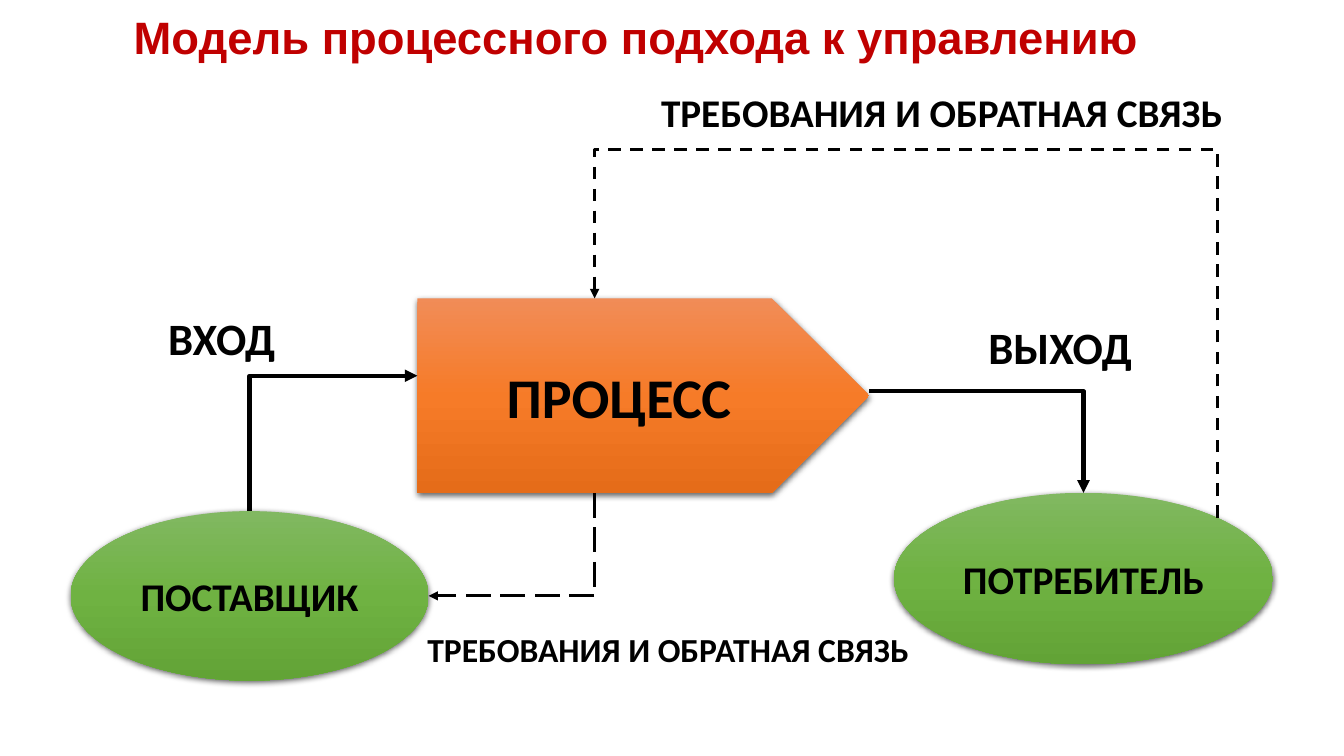
import copy
import math

import pptx
import pptx.dml.color
import pptx.enum.dml
import pptx.enum.shapes
import pptx.enum.text
import pptx.oxml
import pptx.oxml.ns
import pptx.util

Cm, Pt = pptx.util.Cm, pptx.util.Pt
RGB = pptx.dml.color.RGBColor
Form = pptx.enum.shapes.MSO_SHAPE
Dash = pptx.enum.dml.MSO_LINE
Align = pptx.enum.text.PP_ALIGN
Fit = pptx.enum.text.MSO_AUTO_SIZE
Anchor = pptx.enum.text.MSO_ANCHOR
qn = pptx.oxml.ns.qn

RED = RGB(0xC0, 0x00, 0x00)
BLACK = RGB(0x00, 0x00, 0x00)
ORANGE = [RGB(0xF1, 0x8C, 0x57), RGB(0xF6, 0x7B, 0x28), RGB(0xE5, 0x6C, 0x19)]
GREEN = [RGB(0x81, 0xB8, 0x61), RGB(0x6F, 0xB2, 0x42), RGB(0x62, 0xA3, 0x36)]

SHADE = (
    '<a:outerShdw %s blurRad="57150" dist="19050" dir="5400000" algn="ctr" '
    'rotWithShape="0"><a:srgbClr val="000000"><a:alpha val="63000"/>'
    "</a:srgbClr></a:outerShdw>" % pptx.oxml.ns.nsdecls("a")
)


def style(item, form):
    for key, val in form.items():
        setattr(item, key, val)


def write(frame, text, size, color=BLACK, face="Calibri", align=Align.LEFT):
    par = frame.paragraphs[0]
    par.alignment = align
    run = par.add_run()
    run.text = text
    style(run.font, {"name": face, "size": Pt(size), "bold": True})
    run.font.color.rgb = color


def node(slide, form, box, text, size, tones):
    """Shape with a three-tone gradient, a soft shadow and centred text."""
    shape = slide.shapes.add_shape(form, *map(Cm, box))
    shape.fill.gradient()
    shape.fill.gradient_angle = 270
    stops = shape._element.spPr.find(".//" + qn("a:gsLst"))
    stops.insert(1, copy.deepcopy(stops[0]))
    for i, (stop, tone) in enumerate(zip(shape.fill.gradient_stops, tones)):
        stop.color.rgb = tone
        stop.position = i / 2
    shape.line.fill.background()
    shape.shadow.inherit = False
    glow = shape._element.spPr.find(qn("a:effectLst"))
    glow.append(pptx.oxml.parse_xml(SHADE))
    shape.text_frame.vertical_anchor = Anchor.MIDDLE
    write(shape.text_frame, text, size, align=Align.CENTER)


def label(slide, box, text, size, wrap=False):
    frame = slide.shapes.add_textbox(*map(Cm, box)).text_frame
    style(frame, {"word_wrap": wrap, "auto_size": Fit.SHAPE_TO_FIT_TEXT})
    write(frame, text, size)


def link(slide, start, end, width, turn=0, flips=(), dash=None, bend=None):
    """Elbow arrow; the frame is turned about the middle of its two ends."""
    (x1, y1), (x2, y2) = start, end
    wide, high = abs(x2 - x1), abs(y2 - y1)
    if turn % 180:
        wide, high = high, wide
    left, top = (x1 + x2 - wide) / 2, (y1 + y2 - high) / 2
    line = slide.shapes.add_connector(
        pptx.enum.shapes.MSO_CONNECTOR.ELBOW,
        *map(Cm, (left, top, left + wide, top + high)))
    line.line.color.rgb = BLACK
    style(line.line, {"width": Pt(width), "dash_style": dash})

    props = line._element.spPr
    frame = props.find(qn("a:xfrm"))
    frame.set("rot", str(turn * 60000))
    for flip in flips:
        frame.set(flip, "1")
    shape = props.find(qn("a:prstGeom"))
    if bend:
        guide = pptx.oxml.ns.qn("a:gd")
        gd = shape.find(qn("a:avLst")).makeelement(
            guide, {"name": "adj1", "fmla": "val %d" % round(bend * 100000)})
        shape.find(qn("a:avLst")).append(gd)
    else:
        shape.set("prst", "bentConnector2")
    head = props.find(qn("a:ln"))
    head.append(head.makeelement(qn("a:tailEnd"), {"type": "triangle"}))
    props.append(props.makeelement(qn("a:effectLst"), {}))


def heading(slide, box):
    title = slide.shapes.title
    style(title, dict(zip(("left", "top", "width", "height"), map(Cm, box))))
    frame = title.text_frame
    style(frame, {"vertical_anchor": Anchor.MIDDLE, "word_wrap": True,
                  "auto_size": Fit.NONE})
    write(frame, "Модель процессного подхода к управлению", 32.4, RED,
          "Arial", Align.CENTER)
    frame.paragraphs[0].line_spacing = 0.9


def flow(slide, box):
    left, top = box[:2]

    def place(x, y, *size):
        return (left + x, top + y, *size)

    # Process, supplier and consumer
    proc = px, py, pw, ph = place(8.74, 5.41, 11.38, 4.9)
    supp = sx, sy, sw, sh = place(0, 10.77, 9.02, 4.27)
    cons = cx, cy, cw, ch = place(20.75, 10.31, 9.55, 4.32)
    node(slide, Form.PENTAGON, proc, "ПРОЦЕСС", 40, ORANGE)
    node(slide, Form.OVAL, supp, "ПОСТАВЩИК", 28, GREEN)
    node(slide, Form.OVAL, cons, "ПОТРЕБИТЕЛЬ", 28, GREEN)

    # Input and output
    link(slide, (sx + sw / 2, sy), (px, py + 1.95), 3, 90, ("flipH", "flipV"))
    link(slide, (px + pw, py + 2.34), (cx + cw / 2, cy), 3)
    label(slide, place(2.21, 5.59, 3.23, 1.63), "ВХОД", 32)
    label(slide, place(22.88, 5.81, 4.17, 1.63), "ВЫХОД", 32)

    # Feedback, from the upper right of the consumer and to the supplier
    mid = px + (pw - ph / 2) / 2
    slant = math.sqrt(0.5)
    rim = (cx + cw / 2 * (1 + slant), cy + ch / 2 * (1 - slant))
    link(slide, rim, (mid, py), 2.25, 270, ("flipV",), Dash.DASH, 1.68)
    link(slide, (mid, py + ph), (sx + sw, sy + sh / 2), 2.25, 90,
         dash=Dash.LONG_DASH)
    note = "ТРЕБОВАНИЯ И ОБРАТНАЯ СВЯЗЬ"
    label(slide, place(14.63, 0, 15.44, 1.45), note, 28, True)
    label(slide, place(8.74, 13.61, 12.75, 1.27), note, 24)


def main():
    deck = pptx.Presentation()
    style(deck, {"slide_width": Cm(33.87), "slide_height": Cm(19.05)})
    slide = deck.slides.add_slide(deck.slide_layouts[5])
    heading(slide, (1.42, 0.25, 29.21, 1.52))
    flow(slide, (1.78, 2.11, 30.3, 15.04))
    deck.save("out.pptx")


if __name__ == "__main__":
    main()
